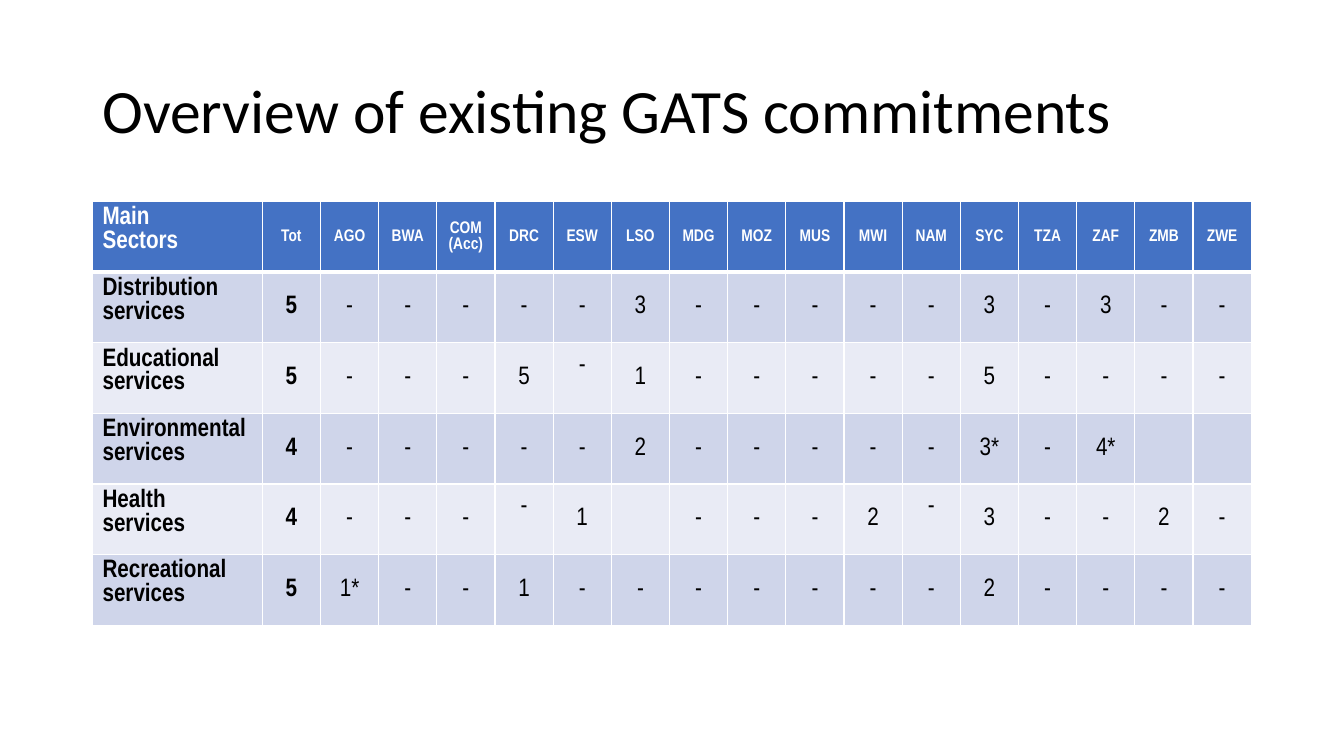
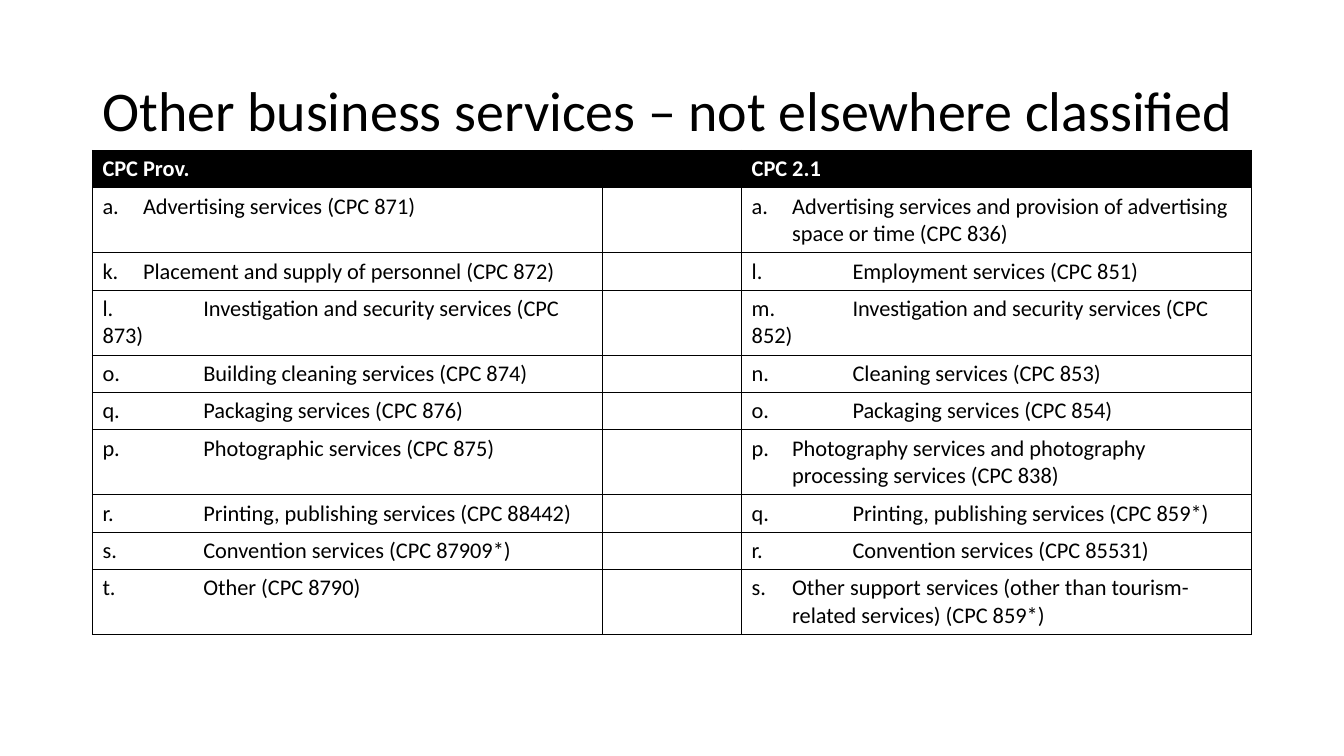
from lxml.etree import SubElement
from pptx import Presentation
from pptx.dml.color import RGBColor
from pptx.enum.text import MSO_ANCHOR, PP_ALIGN
from pptx.oxml.ns import qn
from pptx.util import Cm, Pt

BLACK, WHITE = "000000", "FFFFFF"
HEADER_BLUE, BANDS = "4472C4", ("CFD5EA", "E9EBF5")
BODY_FONT, NARROW_FONT = "Calibri", "Arial Narrow"
LEFT, CONTENT_WIDTH = 2.33, 29.21
HANGING_INDENT, WIDE_TAB = 1.02, 2.54
SINGLE_ROW, DOUBLE_ROW = 0.94, 1.64
RAISED_INSET = 0.73

COUNTRIES = ["AGO", "BWA", "COM\n(Acc)", "DRC", "ESW", "LSO", "MDG", "MOZ",
             "MUS", "MWI", "NAM", "SYC", "TZA", "ZAF", "ZMB", "ZWE"]
COMMITMENTS = [
    ("Distribution services", "5", {"LSO": "3", "SYC": "3", "ZAF": "3"}),
    ("Educational services", "5", {"DRC": "5", "LSO": "1", "SYC": "5"}),
    ("Environmental services", "4",
     {"LSO": "2", "SYC": "3*", "ZAF": "4*", "ZMB": "", "ZWE": ""}),
    ("Health\nservices", "4",
     {"ESW": "1", "LSO": "", "MWI": "2", "SYC": "3", "ZMB": "2"}),
    ("Recreational services", "5", {"AGO": "1*", "DRC": "1", "SYC": "2"}),
]
RAISED = {("Educational services", "ESW"), ("Health\nservices", "DRC"),
          ("Health\nservices", "NAM")}

HANGING, TABBED = True, False
SERVICES = [
    (DOUBLE_ROW, ("a.", "Advertising services (CPC 871)", HANGING),
     ("a.", "Advertising services and provision of advertising space or time (CPC 836)", HANGING)),
    (SINGLE_ROW, ("k.", "Placement and supply of personnel (CPC 872)", HANGING),
     ("l.", "Employment services (CPC 851)", TABBED)),
    (DOUBLE_ROW, ("l.", "Investigation and security services (CPC 873)", TABBED),
     ("m.", "Investigation and security services (CPC 852)", TABBED)),
    (SINGLE_ROW, ("o.", "Building cleaning services (CPC 874)", TABBED),
     ("n.", "Cleaning services (CPC 853)", TABBED)),
    (SINGLE_ROW, ("q.", "Packaging services (CPC 876)", TABBED),
     ("o.", "Packaging services (CPC 854)", TABBED)),
    (DOUBLE_ROW, ("p.", "Photographic services (CPC 875)", TABBED),
     ("p.", "Photography services and photography processing services (CPC 838)", HANGING)),
    (SINGLE_ROW, ("r.", "Printing, publishing services (CPC 88442)", TABBED),
     ("q.", "Printing, publishing services (CPC 859*)", TABBED)),
    (SINGLE_ROW, ("s.", "Convention services (CPC 87909*)", TABBED),
     ("r.", "Convention services (CPC 85531)", TABBED)),
    (DOUBLE_ROW, ("t.", "Other (CPC 8790)", TABBED),
     ("s.", "Other support services (other than tourism-related services) (CPC 859*)", HANGING)),
]


def color(value):
    return RGBColor.from_string(value)


def add_text(paragraph, text, font, size, text_color, bold=False):
    run = paragraph.add_run()
    run.text = text
    run.font.name = font
    run.font.size = Pt(size)
    run.font.bold = bold
    run.font.color.rgb = color(text_color)


def add_title(slide, text, size):
    shape = slide.shapes.add_textbox(Cm(LEFT), Cm(1.01), Cm(CONTENT_WIDTH), Cm(3.68))
    frame = shape.text_frame
    frame.word_wrap = True
    frame.vertical_anchor = MSO_ANCHOR.MIDDLE
    paragraph = frame.paragraphs[0]
    paragraph.line_spacing = 0.9
    add_text(paragraph, text, BODY_FONT, size, BLACK)


def add_table(slide, top, column_widths, row_heights):
    shape = slide.shapes.add_table(len(row_heights), len(column_widths), Cm(LEFT), Cm(top),
                                   Cm(sum(column_widths)), Cm(sum(row_heights)))
    table = shape.table
    table.first_row = False
    table.horz_banding = False
    for column, width in zip(table.columns, column_widths):
        column.width = Cm(width)
    for row, height in zip(table.rows, row_heights):
        row.height = Cm(height)
    return table


def style_cell(cell, border_color, fill_color=None, top_width=1, bottom_width=1):
    properties = cell._tc.get_or_add_tcPr()
    for side, width in (("L", 1), ("R", 1), ("T", top_width), ("B", bottom_width)):
        line = SubElement(properties, qn(f"a:ln{side}"), w=str(Pt(width)))
        fill = SubElement(line, qn("a:solidFill"))
        SubElement(fill, qn("a:srgbClr"), val=border_color)
    if fill_color:
        cell.fill.solid()
        cell.fill.fore_color.rgb = color(fill_color)
    else:
        cell.fill.background()


def write_cell(cell, text, font, size, text_color, bold=False, centered=False):
    frame = cell.text_frame
    if centered:
        cell.vertical_anchor = MSO_ANCHOR.MIDDLE
    for index, line in enumerate(text.split("\n")):
        paragraph = frame.add_paragraph() if index else frame.paragraphs[0]
        if centered:
            paragraph.alignment = PP_ALIGN.CENTER
        if line:
            add_text(paragraph, line, font, size, text_color, bold)
        else:
            SubElement(paragraph._p, qn("a:endParaRPr"), sz=str(size * 100))


def set_tab(paragraph, hanging):
    properties = paragraph._p.get_or_add_pPr()
    position = Cm(HANGING_INDENT if hanging else WIDE_TAB)
    if hanging:
        properties.set("marL", str(position))
        properties.set("indent", str(-position))
    else:
        properties.set("defTabSz", str(position))
    tabs = SubElement(properties, qn("a:tabLst"))
    SubElement(tabs, qn("a:tab"), pos=str(position), algn="l")


def add_commitments_table(slide):
    sector_width = 4.28
    count_width = (CONTENT_WIDTH - sector_width) / (len(COUNTRIES) + 1)
    widths = [sector_width] + [count_width] * (len(COUNTRIES) + 1)
    table = add_table(slide, 5.08, widths, [1.75] * (len(COMMITMENTS) + 1))
    for column, heading in enumerate(["Main\nSectors", "Tot"] + COUNTRIES):
        cell = table.cell(0, column)
        style_cell(cell, WHITE, HEADER_BLUE, bottom_width=3)
        write_cell(cell, heading, NARROW_FONT, 12 if column else 18, WHITE, True, column > 0)
    for row, (sector, total, counts) in enumerate(COMMITMENTS, start=1):
        values = [sector, total] + [counts.get(country, "-") for country in COUNTRIES]
        for column, value in enumerate(values):
            cell = table.cell(row, column)
            style_cell(cell, WHITE, BANDS[(row - 1) % 2], top_width=3 if row == 1 else 1)
            write_cell(cell, value, NARROW_FONT, 18, BLACK, column < 2, column > 0)
            if column > 1 and (sector, COUNTRIES[column - 2]) in RAISED:
                cell.margin_bottom = Cm(RAISED_INSET)


def add_services_table(slide):
    heights = [SINGLE_ROW] + [height for height, _, _ in SERVICES]
    table = add_table(slide, 3.79, [12.85, 3.51, 12.85], heights)
    for column, heading in enumerate(["CPC Prov.", "", "CPC 2.1"]):
        cell = table.cell(0, column)
        style_cell(cell, BLACK, BLACK)
        write_cell(cell, heading, BODY_FONT, 16, WHITE, True)
    for row, (_, provisional, current) in enumerate(SERVICES, start=1):
        for column, entry in enumerate([provisional, None, current]):
            cell = table.cell(row, column)
            style_cell(cell, BLACK)
            if entry:
                label, service, hanging = entry
                set_tab(cell.text_frame.paragraphs[0], hanging)
                write_cell(cell, f"{label}\t{service}", BODY_FONT, 16, BLACK)
            else:
                write_cell(cell, "", BODY_FONT, 16, BLACK)


def main():
    presentation = Presentation()
    presentation.slide_width = Cm(33.87)
    presentation.slide_height = Cm(19.05)
    blank = presentation.slide_layouts[6]

    slide = presentation.slides.add_slide(blank)
    add_title(slide, "Overview of existing GATS commitments", 44)
    add_commitments_table(slide)

    slide = presentation.slides.add_slide(blank)
    add_title(slide, "Other business services – not elsewhere classified", 40)
    add_services_table(slide)

    presentation.save("out.pptx")


if __name__ == "__main__":
    main()
